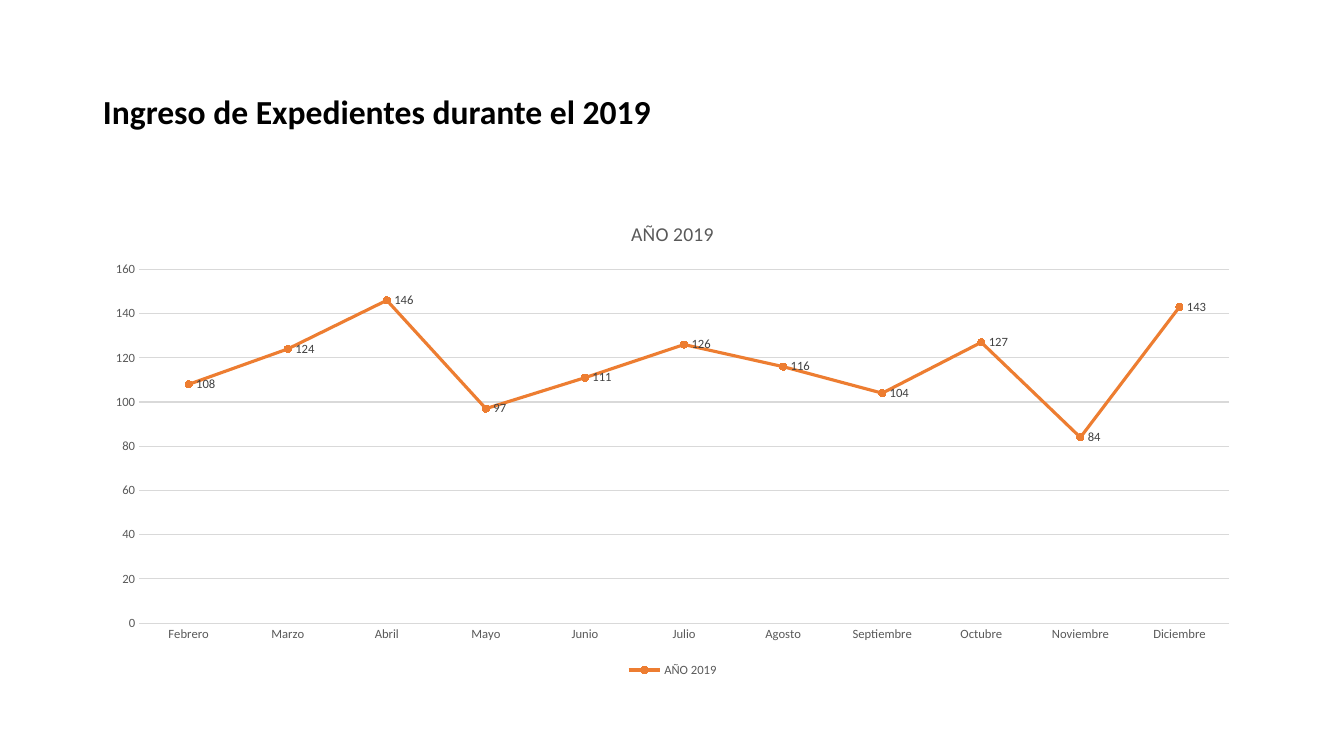
from pptx import Presentation
from pptx.chart.data import CategoryChartData
from pptx.dml.color import RGBColor
from pptx.enum.chart import (XL_CHART_TYPE, XL_LABEL_POSITION, XL_LEGEND_POSITION,
                             XL_MARKER_STYLE, XL_TICK_MARK)
from pptx.enum.text import MSO_ANCHOR, PP_ALIGN
from pptx.util import Inches, Pt

LINE_MARKERS = XL_CHART_TYPE.LINE_MARKERS
LABEL_RIGHT = XL_LABEL_POSITION.RIGHT
LEGEND_BOTTOM = XL_LEGEND_POSITION.BOTTOM
CIRCLE = XL_MARKER_STYLE.CIRCLE
NO_TICK = XL_TICK_MARK.NONE
MIDDLE = MSO_ANCHOR.MIDDLE
LEFT = PP_ALIGN.LEFT

HEADING = "Ingreso de Expedientes durante el 2019"
SERIES_NAME = "AÑO 2019"
CASES = {
    "Febrero": 108, "Marzo": 124, "Abril": 146, "Mayo": 97,
    "Junio": 111, "Julio": 126, "Agosto": 116, "Septiembre": 104,
    "Octubre": 127, "Noviembre": 84, "Diciembre": 143,
}

FONT = "Calibri"
BLACK, GRAY, DARK_GRAY = "000000", "595959", "404040"
GRID, ORANGE = "D9D9D9", "ED7D31"

WIDTH, HEIGHT = 13.33, 7.5
MARGIN = 0.92
CONTENT_WIDTH = 11.5
TITLE_BOX = (MARGIN, 0.4, CONTENT_WIDTH, 1.45)
CHART_BOX = (MARGIN, 2, CONTENT_WIDTH, 4.76)


def style_font(font, size, color, bold=False):
    font.name = FONT
    font.size = Pt(size)
    font.bold = bold
    font.color.rgb = RGBColor.from_string(color)


def style_line(line, color, width):
    line.color.rgb = RGBColor.from_string(color)
    line.width = Pt(width)


def fill_solid(fill, color):
    fill.solid()
    fill.fore_color.rgb = RGBColor.from_string(color)


def add_heading(slide):
    title = slide.shapes.title
    title.left, title.top, title.width, title.height = map(Inches, TITLE_BOX)
    title.text_frame.vertical_anchor = MIDDLE
    title.text_frame.word_wrap = True
    para = title.text_frame.paragraphs[0]
    para.alignment = LEFT
    para.line_spacing = 0.9
    span = para.add_run()
    span.text = HEADING
    style_font(span.font, 24, BLACK, bold=True)


def style_axes(chart):
    for axis in (chart.category_axis, chart.value_axis):
        axis.major_tick_mark = axis.minor_tick_mark = NO_TICK
        style_font(axis.tick_labels.font, 9, GRAY)
    style_line(chart.category_axis.format.line, GRID, 0.75)
    values = chart.value_axis
    values.minimum_scale, values.maximum_scale, values.major_unit = 0, 160, 20
    values.format.line.fill.background()
    values.has_major_gridlines = True
    style_line(values.major_gridlines.format.line, GRID, 0.75)


def style_series(series):
    series.smooth = False
    style_line(series.format.line, ORANGE, 2.25)
    marker = series.marker
    marker.style = CIRCLE
    marker.size = 5
    fill_solid(marker.format.fill, ORANGE)
    style_line(marker.format.line, ORANGE, 0.75)
    labels = series.data_labels
    labels.show_value = True
    labels.position = LABEL_RIGHT
    style_font(labels.font, 9, DARK_GRAY)


def add_cases_chart(slide):
    data = CategoryChartData()
    data.categories = list(CASES)
    data.add_series(SERIES_NAME, list(CASES.values()))
    chart = slide.shapes.add_chart(LINE_MARKERS, *map(Inches, CHART_BOX), data).chart
    style_font(chart.font, 10, BLACK)

    chart.has_title = True
    span = chart.chart_title.text_frame.paragraphs[0].add_run()
    span.text = SERIES_NAME
    style_font(span.font, 14, GRAY)
    chart.chart_title.include_in_layout = False

    chart.has_legend = True
    chart.legend.position = LEGEND_BOTTOM
    chart.legend.include_in_layout = False
    style_font(chart.legend.font, 9, GRAY)

    style_axes(chart)
    chart.plots[0].vary_by_categories = False
    style_series(chart.plots[0].series[0])


def main():
    deck = Presentation()
    deck.slide_width, deck.slide_height = Inches(WIDTH), Inches(HEIGHT)
    title_only = deck.slide_layouts[5]
    slide = deck.slides.add_slide(title_only)
    fill_solid(slide.background.fill, "FFFFFF")
    add_heading(slide)
    add_cases_chart(slide)
    deck.save("out.pptx")


if __name__ == "__main__":
    main()
